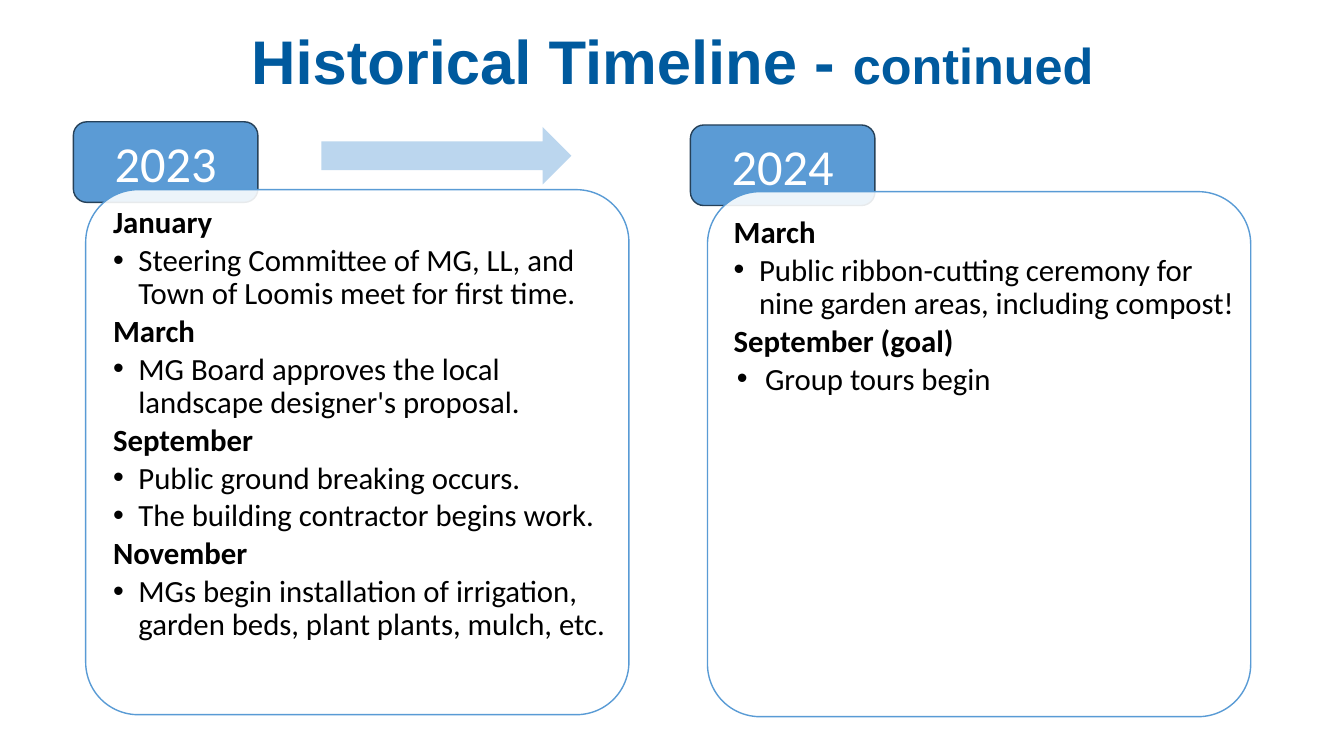
from lxml.etree import SubElement
from pptx import Presentation
from pptx.dml.color import RGBColor
from pptx.enum.shapes import MSO_SHAPE
from pptx.enum.text import MSO_ANCHOR, PP_ALIGN
from pptx.oxml.ns import qn
from pptx.util import Cm, Pt

COLORS = {
    "title": "005A9E", "badge": "5B9BD5", "badge_line": "264159",
    "card": "FFFFFF", "card_line": "599BD5", "arrow": "BBD6EE",
    "year": "FFFFFF", "body": "000000",
}
TITLE = {"name": "Arial", "size": Pt(44), "bold": True}
TITLE_SUFFIX = {**TITLE, "size": Pt(36)}
YEAR = {"name": "Calibri", "size": Pt(36), "bold": False}
MONTH = {"name": "Calibri", "size": Pt(22), "bold": True}
EVENT = {**MONTH, "bold": False}

# Positions and sizes are in cm: left, top, width, height.
# Each event is its text, left margin and hanging indent.
TIMELINE = [
    {
        "year": "2023",
        "badge": (1.85, 3.07, 4.65, 2.03),
        "card": (2.16, 4.78, 13.69, 13.23),
        "text": (2.44, 4.8, 13.64, 12.62),
        "months": [
            ("January", [("Steering Committee of MG, LL, and Town of Loomis "
                          "meet for first time.", 0.64, 0.64)]),
            ("March", [("MG Board approves the local landscape designer's "
                        "proposal.", 0.64, 0.64)]),
            ("September", [("Public ground breaking occurs.", 0.64, 0.64),
                           ("The building contractor begins work.", 0.64, 0.64)]),
            ("November", [("MGs begin installation of irrigation, garden beds, "
                           "plant plants, mulch, etc.", 0.64, 0.64)]),
        ],
    },
    {
        "year": "2024",
        "badge": (17.4, 3.15, 4.65, 2.03),
        "card": (17.83, 4.83, 13.69, 13.23),
        "text": (18.08, 5.05, 13.69, 12.42),
        "months": [
            ("March", [("Public ribbon-cutting ceremony for nine garden areas, "
                        "including compost!", 0.64, 0.64)]),
            ("September (goal)", [("Group tours begin", 0.79, 0.71)]),
        ],
    },
]


def rgb(role):
    return RGBColor.from_string(COLORS[role])


def add_run(paragraph, text, style, role):
    run = paragraph.add_run()
    run.text = text
    for attribute, value in style.items():
        setattr(run.font, attribute, value)
    run.font.color.rgb = rgb(role)


def add_block(shapes, preset, box, fill, outline=None, corner=None):
    block = shapes.add_shape(preset, *map(Cm, box))
    block.shadow.inherit = False
    block.fill.solid()
    block.fill.fore_color.rgb = rgb(fill)
    if outline:
        block.line.color.rgb = rgb(outline)
        block.line.width = Pt(1)
    else:
        block.line.fill.background()
    if corner:
        block.adjustments[0] = corner
    return block


def add_text_frame(shapes, box, inset=None):
    frame = shapes.add_textbox(*map(Cm, box)).text_frame
    frame.word_wrap = True
    if inset:
        for side in ("left", "top", "right", "bottom"):
            setattr(frame, f"margin_{side}", Cm(inset))
    return frame


def set_opacity(shape, percent):
    color = shape.fill._xPr.find(qn("a:solidFill"))[0]
    SubElement(color, qn("a:alpha"), val=str(percent * 1000))


def add_bullet(paragraph, margin, hanging):
    properties = paragraph._p.get_or_add_pPr()
    properties.set("marL", str(Cm(margin)))
    properties.set("indent", str(-Cm(hanging)))
    bullet_color = SubElement(properties, qn("a:buClr"))
    SubElement(bullet_color, qn("a:srgbClr"), val=COLORS["body"])
    SubElement(properties, qn("a:buFont"), typeface="Arial")
    SubElement(properties, qn("a:buChar"), char="•")


def add_title(slide):
    heading = add_text_frame(slide.shapes, (2.34, 0.66, 29.21, 2.01)).paragraphs[0]
    heading.alignment = PP_ALIGN.CENTER
    heading.line_spacing = 0.9
    add_run(heading, "Historical Timeline - ", TITLE, "title")
    add_run(heading, "continued", TITLE_SUFFIX, "title")


def add_months(shapes, box, months):
    frame = add_text_frame(shapes, box, inset=0.41)
    for index, (month, events) in enumerate(months):
        heading = frame.add_paragraph() if index else frame.paragraphs[0]
        add_run(heading, month, MONTH, "body")
        for event, margin, hanging in events:
            entry = frame.add_paragraph()
            add_bullet(entry, margin, hanging)
            add_run(entry, event, EVENT, "body")
    for index, paragraph in enumerate(frame.paragraphs):
        paragraph.line_spacing = 0.9
        paragraph.space_before = Pt(3.3 if index else 0)


def add_year(slide, entry):
    shapes = slide.shapes.add_group_shape().shapes
    badge = add_block(shapes, MSO_SHAPE.ROUNDED_RECTANGLE, entry["badge"],
                      "badge", "badge_line")
    badge.text_frame.vertical_anchor = MSO_ANCHOR.MIDDLE
    label = badge.text_frame.paragraphs[0]
    label.alignment = PP_ALIGN.CENTER
    add_run(label, entry["year"], YEAR, "year")
    card = add_block(shapes, MSO_SHAPE.ROUNDED_RECTANGLE, entry["card"],
                     "card", "card_line", corner=0.1)
    set_opacity(card, 89)
    add_months(shapes, entry["text"], entry["months"])


def main():
    presentation = Presentation()
    presentation.slide_width, presentation.slide_height = Cm(33.87), Cm(19.05)
    slide = presentation.slides.add_slide(presentation.slide_layouts[6])
    add_title(slide)
    for entry in TIMELINE:
        add_year(slide, entry)
    add_block(slide.shapes, MSO_SHAPE.RIGHT_ARROW, (8.1, 3.2, 6.3, 1.45), "arrow")
    presentation.save("out.pptx")


if __name__ == "__main__":
    main()
